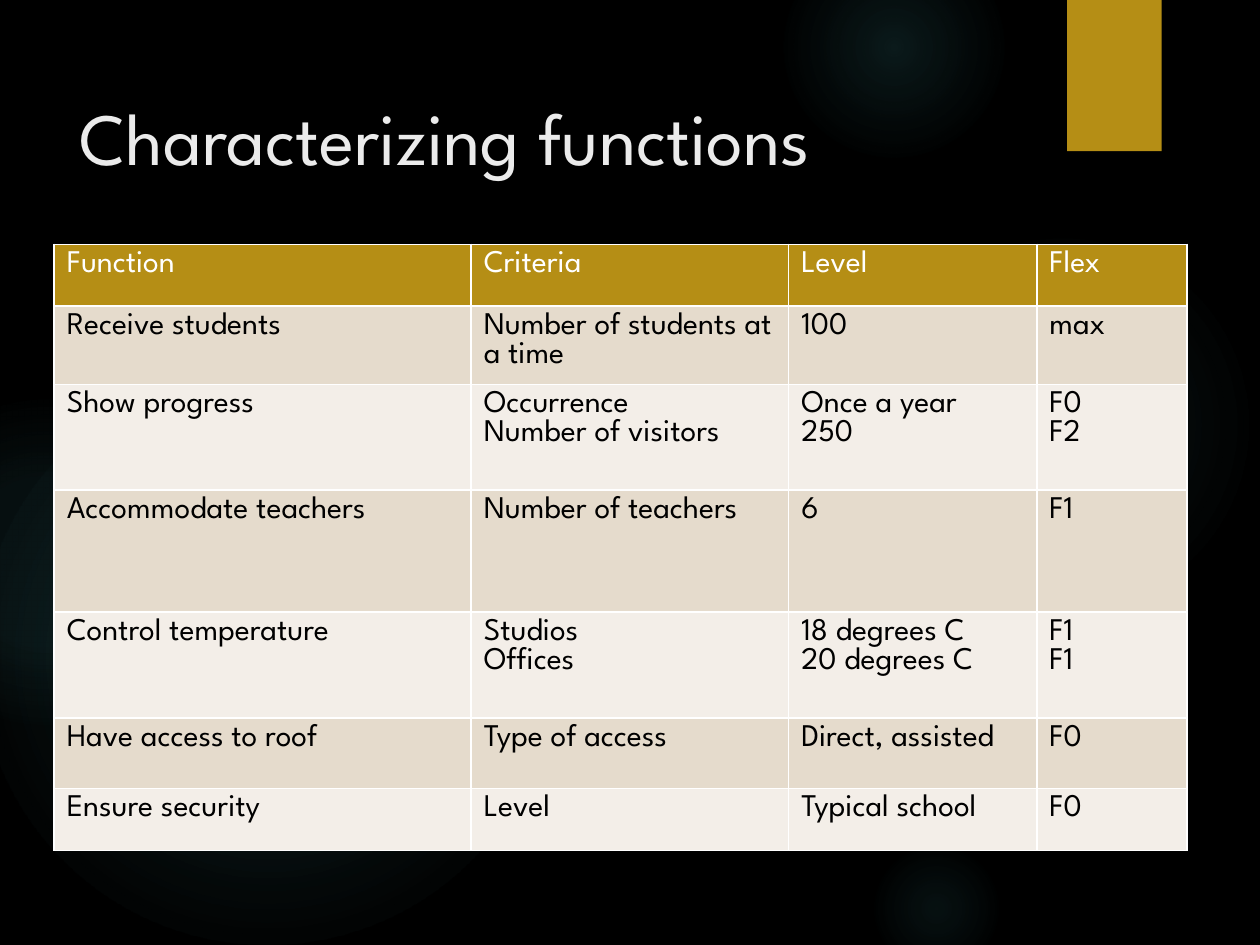
from lxml import etree
from pptx import Presentation
from pptx.dml.color import RGBColor
from pptx.enum.shapes import MSO_SHAPE
from pptx.enum.text import MSO_ANCHOR, PP_ALIGN
from pptx.oxml import parse_xml
from pptx.oxml.ns import nsdecls, qn
from pptx.util import Inches, Pt

OVAL, RECTANGLE = MSO_SHAPE.OVAL, MSO_SHAPE.RECTANGLE
TOP, LEFT = MSO_ANCHOR.TOP, PP_ALIGN.LEFT
TITLE_ONLY = 5

GLOWS = [
    (6.89, 1.83, 3.08, [(0, 7), (36, 6), (69, 0)]),
    (6.22, -0.5, 1.75, [(0, 14), (36, 7), (73, 0)]),
    (6.89, 6.67, 1.08, [(0, 9), (36, 5), (66, 0)]),
    (-0.17, 2.92, 4.58, [(0, 11), (36, 10), (75, 0)]),
    (-0.92, 3.17, 2.58, [(0, 8), (36, 8), (72, 0)]),
]
COLUMNS = [3.31, 2.52, 1.97, 1.19]
HEIGHTS = [0.49, 0.62, 0.84, 0.97, 0.84, 0.56, 0.49]
ROWS = [
    ("Function", "Criteria", "Level", "Flex"),
    ("Receive students", "Number of students at a time", "100", "max"),
    ("Show progress", "Occurrence\nNumber of visitors", "Once a year\n250", "F0\nF2"),
    ("Accommodate teachers", "Number of teachers", "6", "F1"),
    ("Control temperature", "Studios\nOffices", "18 degrees C\n20 degrees C", "F1\nF1"),
    ("Have access to roof", "Type of access", "Direct, assisted", "F0"),
    ("Ensure security", "Level", "Typical school", "F0"),
]


def color(value):
    return RGBColor.from_string(value)


class SlideBuilder:
    """Holds the style and the current slide, and draws each kind of element."""

    font = "League Spartan"
    gold, glow_color, white, black = "B58E15", "50B9C1", "FFFFFF", "000000"
    title_color = "EBEBEB"
    bands = ("F3EEE8", "E5DBCC")

    def __init__(self, deck):
        self.page = deck.slides.add_slide(deck.slide_layouts[TITLE_ONLY])
        fill = self.page.background.fill
        fill.solid()
        fill.fore_color.rgb = color(self.black)

    def set_text(self, frame, text, size, ink):
        frame.text = text
        for para in frame.paragraphs:
            para.alignment = LEFT
            for span in para.runs:
                span.font.name = self.font
                span.font.size = Pt(size)
                span.font.bold = False
                span.font.color.rgb = color(ink)

    def shape(self, kind, left, top, width, height):
        shape = self.page.shapes.add_shape(
            kind, Inches(left), Inches(top), Inches(width), Inches(height))
        shape.shadow.inherit = False
        shape.line.fill.background()
        return shape

    def block(self, left, top, width, height):
        fill = self.shape(RECTANGLE, left, top, width, height).fill
        fill.solid()
        fill.fore_color.rgb = color(self.gold)

    def glow(self, left, top, size, stops):
        oval = self.shape(OVAL, left, top, size, size)
        marks = "".join(
            f'<a:gs pos="{place * 1000}"><a:srgbClr val="{self.glow_color}">'
            f'<a:alpha val="{alpha * 1000}"/></a:srgbClr></a:gs>'
            for place, alpha in stops)
        gradient = parse_xml(
            f'<a:gradFill {nsdecls("a")} rotWithShape="1"><a:gsLst>{marks}</a:gsLst>'
            '<a:path path="circle"><a:fillToRect l="50000" t="50000" r="50000" '
            'b="50000"/></a:path></a:gradFill>')
        oval._element.spPr.find(qn("a:prstGeom")).addnext(gradient)

    def title(self, text, left, top, width, height):
        title = self.page.shapes.title
        title.left, title.top = Inches(left), Inches(top)
        title.width, title.height = Inches(width), Inches(height)
        frame = title.text_frame
        frame.vertical_anchor = TOP
        frame.margin_top = Inches(0.23)
        self.set_text(frame, text, 42, self.title_color)
        self.page.shapes._spTree.append(title._element)

    def border(self, cell):
        properties = cell._tc.get_or_add_tcPr()
        for side in ("lnL", "lnR", "lnT", "lnB"):
            line = etree.SubElement(properties, qn(f"a:{side}"), w=str(Pt(1)))
            paint = etree.SubElement(line, qn("a:solidFill"))
            etree.SubElement(paint, qn("a:srgbClr"), val=self.white)

    def table(self, rows, left, top, widths, heights):
        table = self.page.shapes.add_table(
            len(rows), len(widths), Inches(left), Inches(top),
            Inches(sum(widths)), Inches(sum(heights))).table
        for column, width in zip(table.columns, widths):
            column.width = Inches(width)
        for index, (row, height, texts) in enumerate(zip(table.rows, heights, rows)):
            row.height = Inches(height)
            for cell, text in zip(row.cells, texts):
                self.border(cell)
                cell.fill.solid()
                cell.fill.fore_color.rgb = color(self.bands[index % 2] if index else self.gold)
                self.set_text(cell.text_frame, text, 18, self.black if index else self.white)


def main():
    deck = Presentation()
    deck.slide_width, deck.slide_height = Inches(10), Inches(7.5)
    builder = SlideBuilder(deck)
    for glow in GLOWS:
        builder.glow(*glow)
    builder.block(8.47, 0, 0.75, 1.2)
    builder.title("Characterizing functions", 0.53, 0.5, 7.72, 1.53)
    builder.table(ROWS, 0.43, 1.94, COLUMNS, HEIGHTS)
    deck.save("out.pptx")


if __name__ == "__main__":
    main()
